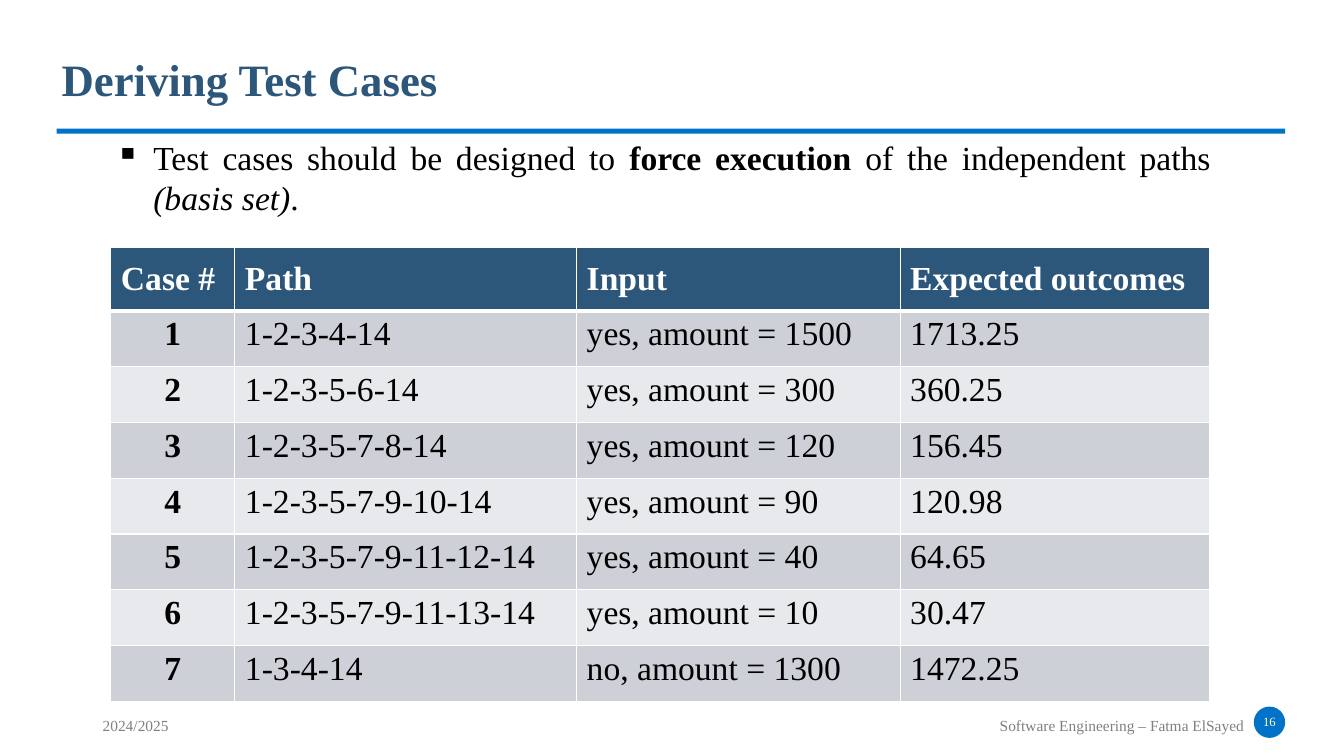
"""Build a slide on deriving test cases, with a table of paths, inputs and outcomes."""
import pptx
import pptx.dml.color
import pptx.enum.shapes
import pptx.enum.text
import pptx.oxml
import pptx.oxml.ns
import pptx.util

Pt = pptx.util.Pt
RGBColor = pptx.dml.color.RGBColor
ALIGN = pptx.enum.text.PP_ALIGN
ANCHOR = pptx.enum.text.MSO_ANCHOR
SHAPE = pptx.enum.shapes.MSO_SHAPE

FONT = "Times New Roman"
NAVY = RGBColor(0x2C, 0x56, 0x7A)
BLUE = RGBColor(0x00, 0x72, 0xC7)
GREY = RGBColor(0x80, 0x80, 0x80)
BLACK = RGBColor(0x00, 0x00, 0x00)
WHITE = RGBColor(0xFF, 0xFF, 0xFF)
BANDS = (RGBColor(0xCD, 0xD1, 0xD7), RGBColor(0xE8, 0xE9, 0xEC))

HEADERS = ("Case #", "Path", "Input", "Expected outcomes")
CASES = (
    ("1-2-3-4-14", "yes, amount = 1500", "1713.25"),
    ("1-2-3-5-6-14", "yes, amount = 300", "360.25"),
    ("1-2-3-5-7-8-14", "yes, amount = 120", "156.45"),
    ("1-2-3-5-7-9-10-14", "yes, amount = 90", "120.98"),
    ("1-2-3-5-7-9-11-12-14", "yes, amount = 40", "64.65"),
    ("1-2-3-5-7-9-11-13-14", "yes, amount = 10", "30.47"),
    ("1-3-4-14", "no, amount = 1300", "1472.25"),
)
COLUMN_WIDTHS = (88.6, 244.1, 231.1, 221)
HEADER_HEIGHT = 45.3


def style(p, size, color, bold=False):
    p.font.name = FONT
    p.font.size = Pt(size)
    p.font.color.rgb = color
    p.font.bold = bold


def add_text(s, box, text, size, color, bold=False, wrap=False):
    tf = s.shapes.add_textbox(*map(Pt, box)).text_frame
    tf.word_wrap = wrap
    p = tf.paragraphs[0]
    p.text = text
    style(p, size, color, bold)
    return tf


def add_solid(s, kind, box):
    sp = s.shapes.add_shape(kind, *map(Pt, box))
    sp.shadow.inherit = False
    sp.fill.solid()
    sp.fill.fore_color.rgb = BLUE
    sp.line.fill.background()


def add_heading(s, x, y, w, h):
    rule = 3.6
    tf = add_text(s, (x - 3.6, y, 286, 46), "Deriving Test Cases", 32, NAVY, True)
    tf.paragraphs[0].space_before = Pt(6.4)
    add_solid(s, SHAPE.RECTANGLE, (x, y + h - rule, w, rule))


def add_bullet(s, x, y, w, h):
    tf = add_text(s, (x, y, w, h), "", 24, BLACK, wrap=True)
    p = tf.paragraphs[0]
    p.alignment = ALIGN.JUSTIFY
    p.space_after = Pt(18)
    pPr = p._p.get_or_add_pPr()
    pPr.set("marL", str(Pt(40.5)))
    pPr.set("indent", str(Pt(-27)))
    bullet = pptx.oxml.parse_xml(f'<a:buChar {pptx.oxml.ns.nsdecls("a")} char="▪"/>')
    pPr.find(pptx.oxml.ns.qn("a:defRPr")).addprevious(bullet)
    for text, bold, italic in (
        ("Test cases should be designed to ", False, False),
        ("force execution", True, False),
        (" of the independent paths ", False, False),
        ("(basis set)", False, True),
        (".", False, False),
    ):
        r = p.add_run()
        r.text = text
        r.font.bold = bold
        r.font.italic = italic


def add_borders(cell, bottom):
    tcPr = cell._tc.get_or_add_tcPr()
    widths = (("lnL", 1), ("lnR", 1), ("lnT", 1), ("lnB", bottom))
    for i, (side, width) in enumerate(widths):
        tcPr.insert(i, pptx.oxml.parse_xml(
            f'<a:{side} {pptx.oxml.ns.nsdecls("a")} w="{Pt(width)}">'
            f'<a:solidFill><a:srgbClr val="{WHITE}"/></a:solidFill></a:{side}>'))


def add_case_table(s, x, y, w, h):
    rows = [HEADERS] + [(str(n), *case) for n, case in enumerate(CASES, 1)]
    frame = s.shapes.add_table(len(rows), len(HEADERS), *map(Pt, (x, y, w, h)))
    table = frame.table
    for column, width in zip(table.columns, COLUMN_WIDTHS):
        column.width = Pt(width)
    for i, values in enumerate(rows):
        header = i == 0
        table.rows[i].height = Pt(HEADER_HEIGHT if header else (h - HEADER_HEIGHT) / len(CASES))
        for j, value in enumerate(values):
            cell = table.cell(i, j)
            cell.fill.solid()
            cell.fill.fore_color.rgb = NAVY if header else BANDS[(i - 1) % 2]
            cell.vertical_anchor = ANCHOR.MIDDLE if header else ANCHOR.TOP
            p = cell.text_frame.paragraphs[0]
            p.text = value
            p.alignment = ALIGN.LEFT if header or j else ALIGN.CENTER
            style(p, 24, WHITE if header else BLACK, header or j == 0)
            add_borders(cell, 3 if header else 1)


def add_footer(s, x, y, w, h):
    badge = 22.4
    left = x + w - badge
    add_text(s, (x, y + 3.6, 62, 20.9), "2024/2025", 11, GREY)
    add_text(s, (left - 188.6, y + 3.6, 190, 20.9),
             "Software Engineering – Fatma ElSayed", 11, GREY)
    add_solid(s, SHAPE.OVAL, (left, y, badge, badge))
    tf = add_text(s, (left, y + 3.6, badge, h - 10), "16", 9, WHITE, wrap=True)
    tf.margin_left = tf.margin_right = tf.margin_top = tf.margin_bottom = 0
    tf.vertical_anchor = ANCHOR.MIDDLE
    tf.paragraphs[0].alignment = ALIGN.CENTER


def main():
    prs = pptx.Presentation()
    prs.slide_width, prs.slide_height = Pt(960), Pt(540)
    s = prs.slides.add_slide(prs.slide_layouts[6])
    add_footer(s, 66.2, 504.7, 851.8, 24.5)
    add_heading(s, 40.5, 33.1, 877.5, 62.4)
    add_case_table(s, 79.2, 176.6, 784.8, 324.6)
    add_bullet(s, 61.9, 94.3, 810, 65.5)
    prs.save("out.pptx")


if __name__ == "__main__":
    main()
